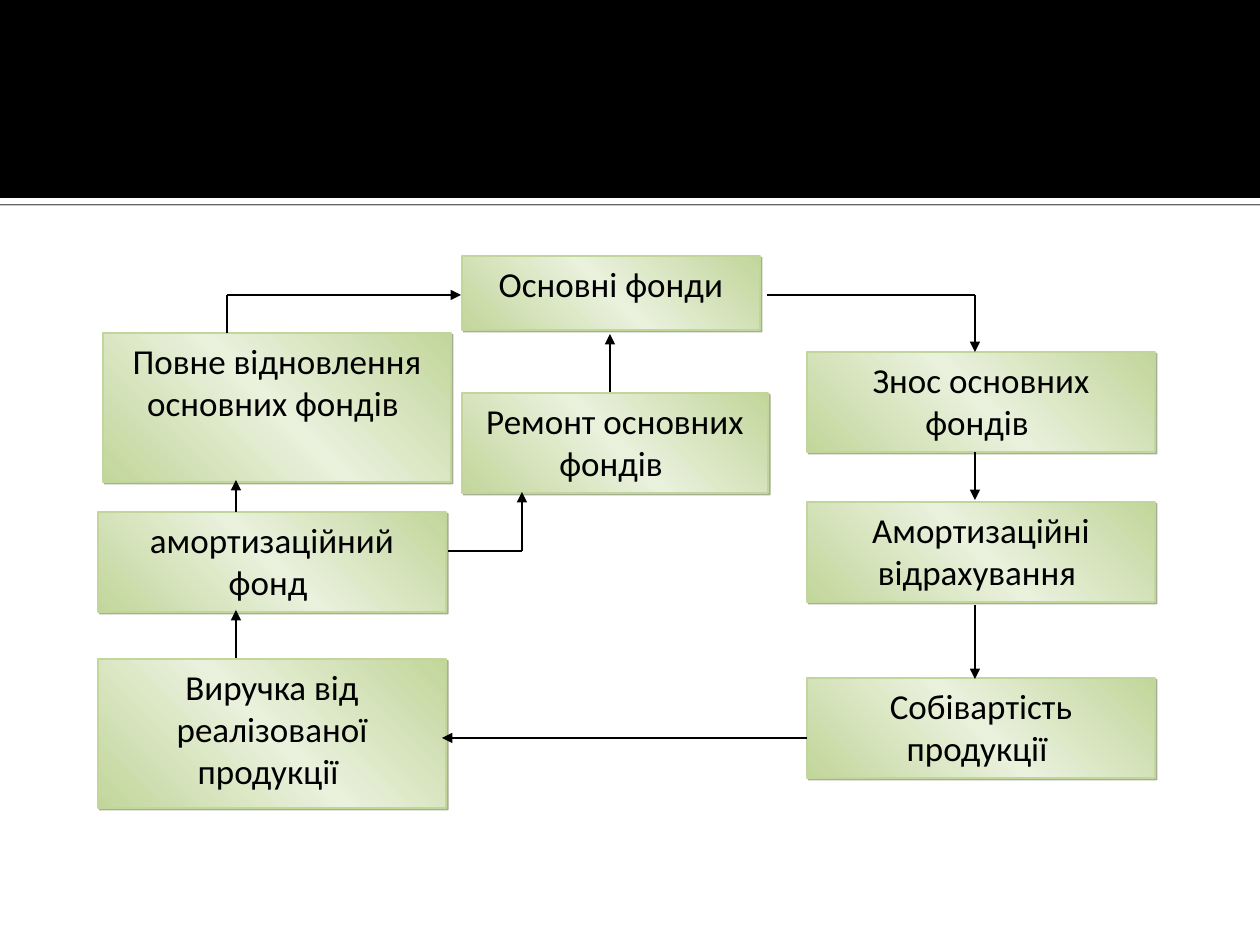
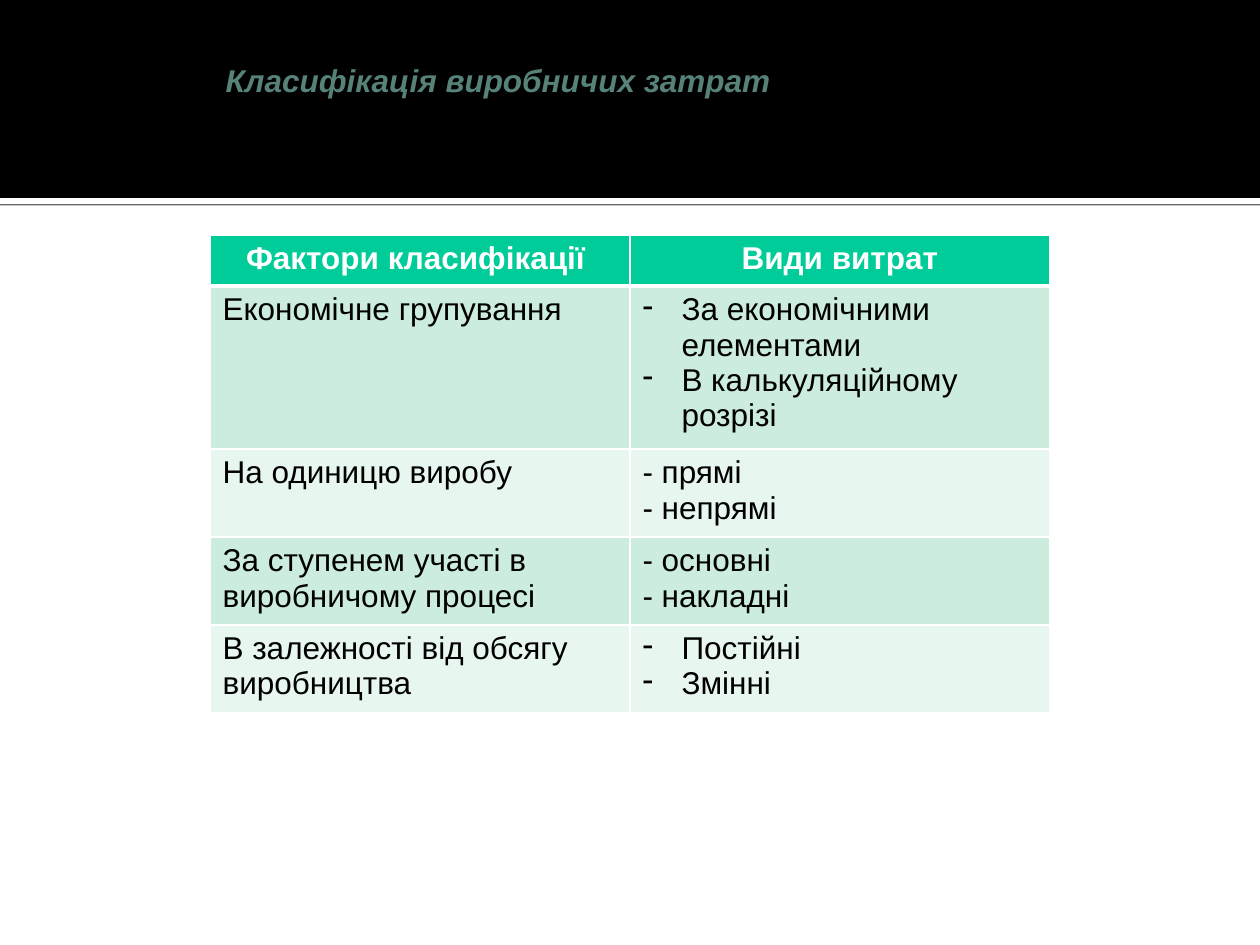
"""Build two slides on fixed assets and on cost groups."""
import pptx
import pptx.util
import pptx.dml.color
import pptx.enum.shapes
import pptx.enum.text
import pptx.oxml
import pptx.oxml.ns
from lxml import etree

SCALE = 914400 / 126
INKS = {
    "band": "000000", "page": "FFFFFF", "text": "000000", "title": "578279",
    "edge": "C2D69B", "glow": "EAF1DD", "shade": "4E6128",
    "head": "00CC99", "odd": "CCECDE", "even": "E7F6EF",
}
ALIGN = pptx.enum.text.PP_ALIGN
TOP = pptx.enum.text.MSO_ANCHOR.TOP
RECT = pptx.enum.shapes.MSO_SHAPE.RECTANGLE
LINE = pptx.enum.shapes.MSO_CONNECTOR.STRAIGHT
BOXES = [
    ("Основні фонди", 462, 256, 298, 74),
    ("Повне відновлення основних фондів ", 103, 333, 348, 149),
    ("Ремонт основних фондів ", 462, 393, 306, 100),
    ("Знос основних фондів ", 807, 352, 348, 100),
    ("амортизаційний фонд ", 98, 512, 348, 100),
    ("Виручка від реалізованої продукції ", 98, 659, 348, 149),
    ("Амортизаційні відрахування ", 807, 502, 348, 100),
    ("Собівартість продукції ", 807, 678, 348, 100),
]
PATHS = [
    [(767, 295), (975, 295), (975, 352)],
    [(975, 452), (975, 500)],
    [(975, 605), (975, 679)],
    [(807, 738), (442, 738)],
    [(236, 658), (236, 610)],
    [(448, 551), (522, 551), (522, 492)],
    [(236, 512), (236, 480)],
    [(227, 333), (227, 295), (461, 295)],
    [(610, 392), (610, 334)],
]
ROWS = [
    (51, "Фактори класифікації ", ["Види витрат"], False),
    (163, "Економічне групування",
     ["За економічними елементами", "В калькуляційному розрізі"], True),
    (88, "На одиницю виробу", ["- прямі", "- непрямі"], False),
    (88, "За ступенем участі в виробничому процесі",
     ["- основні", "- накладні"], False),
    (88, "В залежності від обсягу виробництва", ["Постійні", "Змінні"], True),
]


def px(num):
    """Turn px into EMU."""
    return pptx.util.Emu(round(num * SCALE))


def ink(name):
    """Return a named colour."""
    return pptx.dml.color.RGBColor.from_string(INKS[name])


def put(item, **vals):
    """Set each given value on an object."""
    for key, val in vals.items():
        setattr(item, key, val)


def node(root, tag, **vals):
    """Add an XML child with its values."""
    kid = etree.SubElement(root, pptx.oxml.ns.qn(tag))
    for key, val in vals.items():
        kid.set(key, str(val))
    return kid


def tint(root, name, alpha=None):
    """Add a colour to an XML node."""
    tone = node(root, "a:srgbClr", val=INKS[name])
    if alpha:
        node(tone, "a:alpha", val=alpha * 1000)


def write(frame, lines, size, face, tone, align=ALIGN.LEFT, after=0,
          bold=False, slant=False):
    """Fill a text frame with styled lines."""
    frame.text = "\n".join(lines)
    for par in frame.paragraphs:
        put(par, alignment=align, space_after=pptx.util.Pt(after))
        font = par.runs[0].font
        put(font, size=pptx.util.Pt(size), name=face, bold=bold, italic=slant)
        font.color.rgb = ink(tone)


def block(slide, left, top, wide, high):
    """Add a plain rectangle."""
    shape = slide.shapes.add_shape(RECT, px(left), px(top), px(wide), px(high))
    shape.shadow.inherit = False
    return shape


def shade(shape, name, alpha, dist, turn):
    """Give a shape a sharp shadow."""
    root = shape.element.spPr.find(pptx.oxml.ns.qn("a:effectLst"))
    cast = node(root, "a:outerShdw", blurRad=0, dist=round(dist * 12700),
                dir=turn * 60000, algn="ctr", rotWithShape=0)
    tint(cast, name, alpha)


def bands(deck, slide):
    """Set the shared head bands behind the master."""
    tree = deck.slide_master.shapes.element
    strip = block(slide, 0, 198, 1260, 6)
    shade(strip, "band", 60, 0.8, 90)
    head = block(slide, 0, 0, 1260, 198)
    pairs = [(strip, "page"), (head, "band")]
    for num, (shape, tone) in enumerate(pairs):
        shape.fill.solid()
        shape.fill.fore_color.rgb = ink(tone)
        shape.line.fill.background()
        shape.element.nvSpPr.cNvPr.set("id", str(101 + num))
        tree.insert(2 + num, shape.element)


def box(slide, text, *place):
    """Add a green box with a soft blend."""
    shape = block(slide, *place)
    shape.fill.gradient()
    shape.fill.gradient_angle = 225
    stops = shape.element.spPr.find(".//" + pptx.oxml.ns.qn("a:gsLst"))
    for stop in list(stops):
        stops.remove(stop)
    for pos, tone in [(0, "edge"), (50, "glow"), (100, "edge")]:
        tint(node(stops, "a:gs", pos=pos * 1000), tone)
    shape.line.color.rgb = ink("edge")
    shape.line.width = pptx.util.Pt(1)
    shade(shape, "shade", 50, 1.4, 45)
    put(shape.text_frame, word_wrap=True, vertical_anchor=TOP)
    write(shape.text_frame, [text], 20, "Calibri", "text", ALIGN.CENTER, 10)


def route(slide, spots):
    """Join spots by lines and end in an arrow."""
    for start, end in zip(spots, spots[1:]):
        link = slide.shapes.add_connector(LINE, *map(px, start + end))
        link.line.color.rgb = ink("text")
        link.line.width = pptx.util.Pt(0.75)
        node(link.element.spPr, "a:effectLst")
    node(link.line._get_or_add_ln(), "a:tailEnd", type="triangle")


def title(slide, text):
    """Place and style the title."""
    shape = slide.shapes.title
    put(shape, left=px(213), top=px(55), width=px(576), height=px(50))
    put(shape.text_frame, word_wrap=False, vertical_anchor=TOP,
        auto_size=pptx.enum.text.MSO_AUTO_SIZE.NONE)
    write(shape.text_frame, [text], 18, "Arial", "title", bold=True, slant=True)


def dash(par):
    """Give a line a hanging dash."""
    root = par._p.get_or_add_pPr()
    put_in = px(39)
    root.set("marL", str(put_in))
    root.set("indent", str(-put_in))
    node(root, "a:buChar", char="-")


def cell(spot, lines, tone, head, marks):
    """Fill one table cell."""
    if head:
        write(spot.text_frame, lines, 18, "Arial", "page", ALIGN.CENTER, bold=True)
    else:
        write(spot.text_frame, lines, 18, "Arial", "text")
    if marks:
        for par in spot.text_frame.paragraphs:
            dash(par)
    root = spot._tc.get_or_add_tcPr()
    for side in "LRTB":
        thick = 3 if head and side == "B" else 1
        edge = node(root, "a:ln" + side, w=thick * 12700)
        tint(node(edge, "a:solidFill"), "page")
    spot.fill.solid()
    spot.fill.fore_color.rgb = ink(tone)


def grid(slide):
    """Add the table of cost groups."""
    high = sum(row[0] for row in ROWS)
    table = slide.shapes.add_table(
        len(ROWS), 2, px(210), px(235), px(840), px(high)).table
    for num, (tall, left, right, marks) in enumerate(ROWS):
        table.rows[num].height = px(tall)
        head = num == 0
        tone = "head" if head else "odd" if num % 2 else "even"
        cell(table.cell(num, 0), [left], tone, head, False)
        cell(table.cell(num, 1), right, tone, head, marks)


def main():
    """Build and save the deck."""
    deck = pptx.Presentation()
    put(deck, slide_width=px(1260), slide_height=px(945))
    flow = deck.slides.add_slide(deck.slide_layouts[6])
    bands(deck, flow)
    for item in BOXES:
        box(flow, *item)
    for spots in PATHS:
        route(flow, spots)
    costs = deck.slides.add_slide(deck.slide_layouts[5])
    title(costs, "Класифікація виробничих затрат")
    grid(costs)
    deck.save("out.pptx")


if __name__ == "__main__":
    main()
